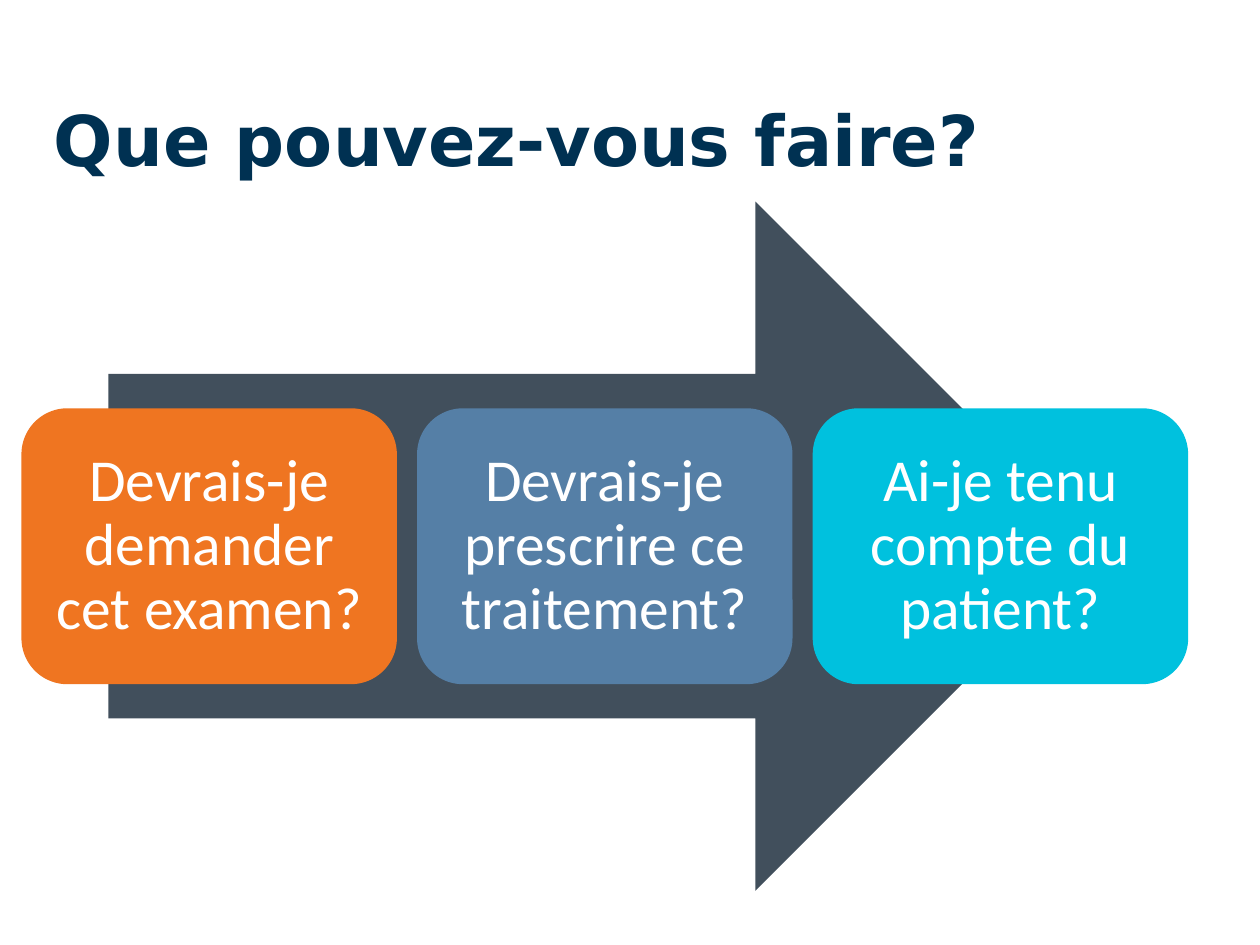
"""Build a slide with three question cards laid over a large arrow."""
import pptx
import pptx.dml.color
import pptx.enum.shapes
import pptx.enum.text
import pptx.util

Inches = pptx.util.Inches
Shapes = pptx.enum.shapes.MSO_SHAPE
Align = pptx.enum.text.PP_ALIGN
Anchor = pptx.enum.text.MSO_ANCHOR


def color(hex_code):
    return pptx.dml.color.RGBColor.from_string(hex_code)


def write(shape, text, *, font, size, fill, bold=False, align=Align.LEFT,
          anchor=Anchor.MIDDLE, inset=None):
    frame = shape.text_frame
    frame.word_wrap = True
    frame.vertical_anchor = anchor
    if inset is not None:
        frame.margin_left = frame.margin_right = Inches(inset)
        frame.margin_top = frame.margin_bottom = Inches(inset)
    paragraph = frame.paragraphs[0]
    paragraph.alignment = align
    paragraph.line_spacing = 0.9
    run = paragraph.add_run()
    run.text = text
    run.font.name = font
    run.font.size = pptx.util.Pt(size)
    run.font.bold = bold
    run.font.color.rgb = color(fill)


class SlideBuilder:
    title_font = "DejaVu Sans"
    card_font = "Calibri"
    navy = "003152"
    white = "FFFFFF"
    slate = "414F5C"

    def __init__(self, slide):
        self.slide = slide

    def title(self, text, left, top, width, height):
        box = self.slide.shapes.add_textbox(
            Inches(left), Inches(top), Inches(width), Inches(height))
        write(box, text, font=self.title_font, size=40, fill=self.navy,
              bold=True, anchor=Anchor.BOTTOM)

    def block(self, kind, fill, left, top, width, height):
        shape = self.slide.shapes.add_shape(
            kind, Inches(left), Inches(top), Inches(width), Inches(height))
        shape.shadow.inherit = False
        shape.fill.solid()
        shape.fill.fore_color.rgb = color(fill)
        shape.line.fill.background()
        return shape

    def arrow(self, left, top, width, height):
        self.block(Shapes.RIGHT_ARROW, self.slate, left, top, width, height)

    def card(self, text, fill, left, top, width, height):
        shape = self.block(Shapes.ROUNDED_RECTANGLE, fill, left, top, width, height)
        write(shape, text, font=self.card_font, size=34, fill=self.white,
              align=Align.CENTER, inset=0.14)


def main():
    presentation = pptx.Presentation()
    presentation.slide_width = Inches(10)
    presentation.slide_height = Inches(7.5)
    builder = SlideBuilder(presentation.slides.add_slide(presentation.slide_layouts[6]))

    builder.title("Que pouvez-vous faire?", 0.33, 0.08, 8.39, 1.41)
    builder.arrow(0.86, 1.6, 7.87, 5.47)

    cards = [
        ("Devrais-je demander cet examen?", "EF7521"),
        ("Devrais-je prescrire ce traitement?", "557FA6"),
        ("Ai-je tenu compte du patient?", "00C1DE"),
    ]
    card_width, gap = 2.98, 0.16
    for index, (question, fill) in enumerate(cards):
        left = 0.17 + index * (card_width + gap)
        builder.card(question, fill, left, 3.24, card_width, 2.19)

    presentation.save("out.pptx")


if __name__ == "__main__":
    main()
